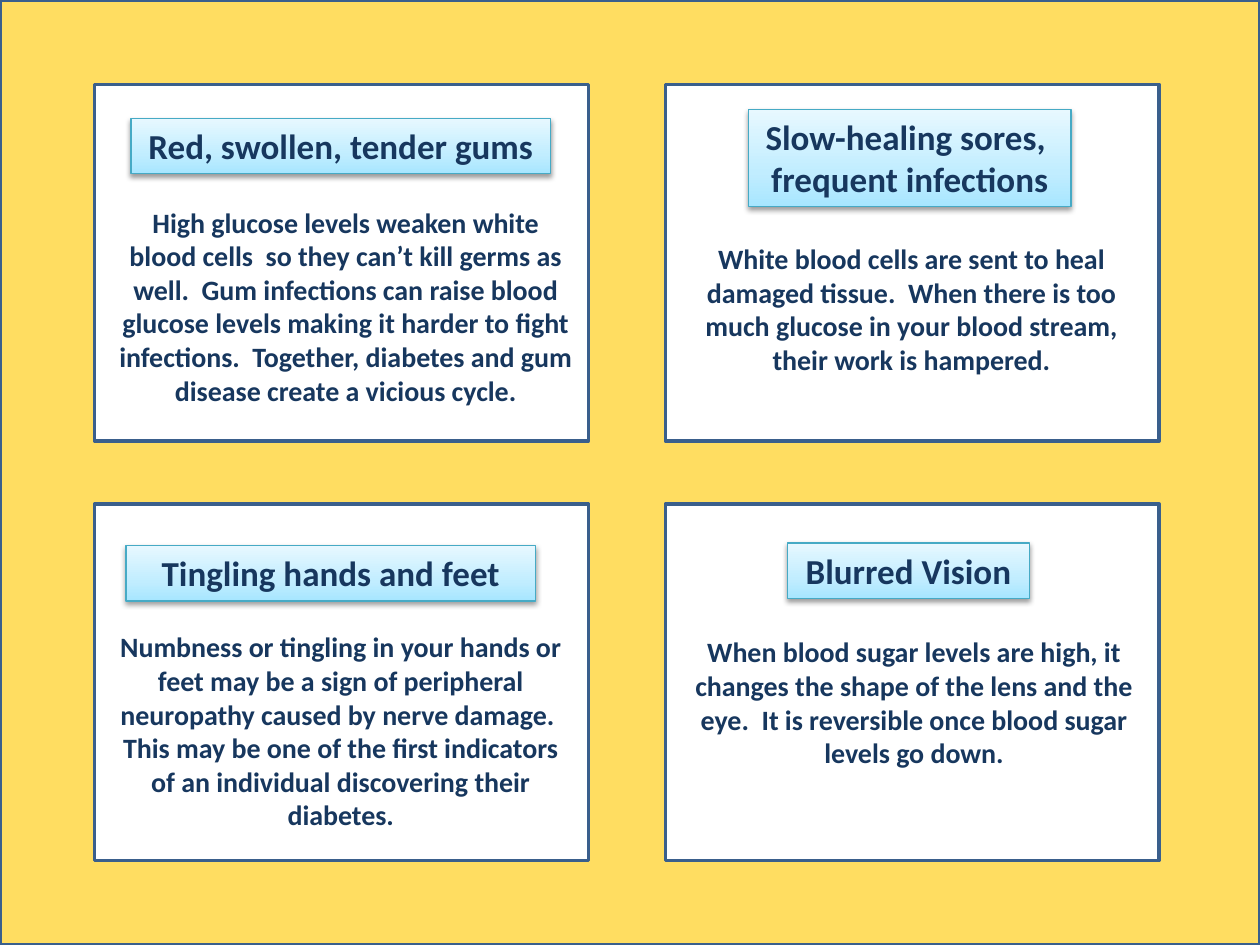
from copy import deepcopy

from pptx import Presentation
from pptx.dml.color import RGBColor
from pptx.enum.shapes import MSO_SHAPE
from pptx.enum.text import MSO_ANCHOR, MSO_AUTO_SIZE, PP_ALIGN
from pptx.oxml import parse_xml
from pptx.oxml.ns import nsdecls, qn
from pptx.util import Inches, Pt

RECT = MSO_SHAPE.RECTANGLE
CENTER = PP_ALIGN.CENTER
TOP = MSO_ANCHOR.TOP
GROW = MSO_AUTO_SIZE.SHAPE_TO_FIT_TEXT

COLORS = {"backdrop": "FFDD61", "card": "FFFFFF", "border": "3A5F8C",
          "text": "17375E", "heading_line": "46AAC5", "shadow": "000000"}
HEADING_STOPS = [(0, "A7E6FF"), (0.35, "C1EDFF"), (1, "E7F8FF")]
FONT = "Calibri"

SLIDE_W, SLIDE_H = 10, 7.5
CARD_LEFTS, CARD_TOPS = (0.75, 5.28), (0.67, 4)
CARD_W, CARD_H = 3.92, 2.83

# Heading, its box, body, its box; boxes are left, top, width, height
SYMPTOMS = [
    ("Red, swollen, tender gums", (1.04, 0.94, 3.33, 0.44),
     "High glucose levels weaken white blood cells  so they can’t kill germs as well.  "
     "Gum infections can raise blood glucose levels making it harder to fight infections.  "
     "Together, diabetes and gum disease create a vicious cycle.",
     (0.83, 1.58, 3.83, 1.72)),
    ("Tingling hands and feet", (1, 4.33, 3.25, 0.44),
     "Numbness or tingling in your hands or feet may be a sign of peripheral neuropathy "
     "caused by nerve damage.  This may be one of the first indicators of an individual "
     "discovering their diabetes.",
     (0.83, 4.95, 3.75, 1.72)),
    ("Slow-healing sores, \nfrequent infections", (5.94, 0.87, 2.56, 0.77),
     "White blood cells are sent to heal damaged tissue.  When there is too much glucose "
     "in your blood stream, their work is hampered.",
     (5.36, 1.87, 3.75, 1.18)),
    ("Blurred Vision", (6.25, 4.31, 1.92, 0.44),
     "When blood sugar levels are high, it changes the shape of the lens and the eye.  "
     "It is reversible once blood sugar levels go down.",
     (5.38, 4.99, 3.75, 1.18)),
]


def rgb(name):
    return RGBColor.from_string(COLORS[name])


def add_rect(s, box, line, width):
    sp = s.shapes.add_shape(RECT, *map(Inches, box))
    sp.shadow.inherit = False
    sp.line.color.rgb = rgb(line)
    sp.line.width = Pt(width)
    return sp


def add_panel(s, box, fill):
    sp = add_rect(s, box, "border", 2)
    sp.fill.solid()
    sp.fill.fore_color.rgb = rgb(fill)


def write(sp, text, size):
    tf = sp.text_frame
    tf.word_wrap = True
    tf.auto_size = GROW
    tf.vertical_anchor = TOP
    p = tf.paragraphs[0]
    p.alignment = CENTER
    for i, line in enumerate(text.split("\n")):
        if i:
            p.add_line_break()
        r = p.add_run()
        r.text = line
        r.font.name = FONT
        r.font.size = Pt(size)
        r.font.bold = True
        r.font.color.rgb = rgb("text")


def fill_gradient(sp):
    """Three-stop gradient running from the bottom edge to the top."""
    sp.fill.gradient()
    sp.fill.gradient_angle = 90
    stops = sp._element.spPr.find(qn("a:gradFill")).find(qn("a:gsLst"))
    stops.insert(1, deepcopy(stops[0]))
    for stop, (position, color) in zip(sp.fill.gradient_stops, HEADING_STOPS):
        stop.position = position
        stop.color.rgb = RGBColor.from_string(color)


def add_shadow(sp):
    effects = sp._element.spPr.find(qn("a:effectLst"))
    effects.append(parse_xml(
        f'<a:outerShdw {nsdecls("a")} blurRad="{Pt(3.1)}" dist="{Pt(1.6)}" '
        f'dir="5400000" rotWithShape="0"><a:srgbClr val="{COLORS["shadow"]}">'
        '<a:alpha val="38000"/></a:srgbClr></a:outerShdw>'))


def add_heading(s, text, box):
    sp = add_rect(s, box, "heading_line", 0.75)
    fill_gradient(sp)
    add_shadow(sp)
    write(sp, text, 20)


def main():
    prs = Presentation()
    prs.slide_width, prs.slide_height = Inches(SLIDE_W), Inches(SLIDE_H)
    s = prs.slides.add_slide(prs.slide_layouts[6])
    add_panel(s, (0, 0, SLIDE_W, SLIDE_H), "backdrop")
    for left in CARD_LEFTS:
        for top in CARD_TOPS:
            add_panel(s, (left, top, CARD_W, CARD_H), "card")
    for heading, heading_box, body, body_box in SYMPTOMS:
        add_heading(s, heading, heading_box)
        write(s.shapes.add_textbox(*map(Inches, body_box)), body, 16)
    prs.save("out.pptx")


if __name__ == "__main__":
    main()
